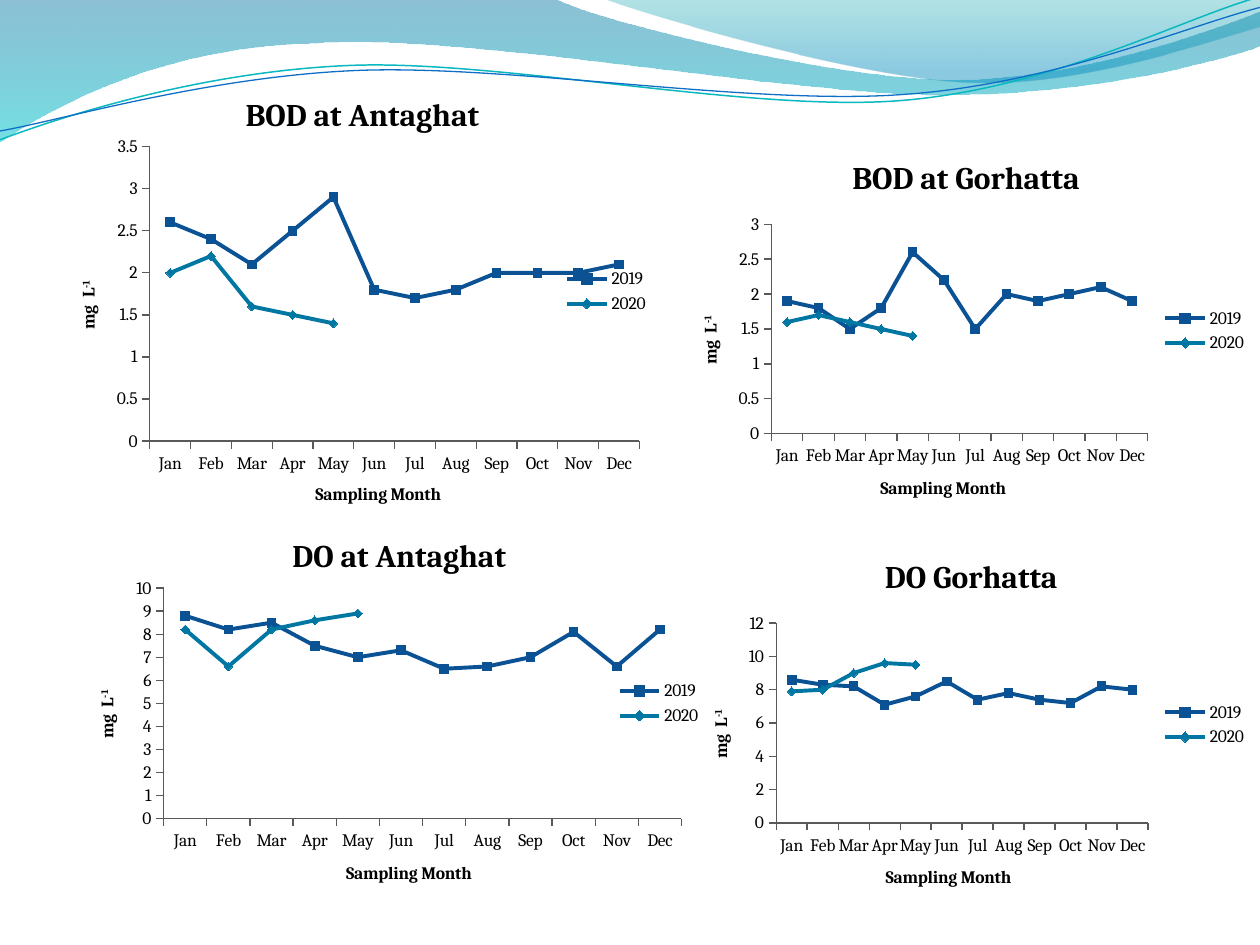
from math import cos, radians, sin

from lxml.etree import SubElement
from pptx import Presentation
from pptx.chart.data import CategoryChartData
from pptx.dml.color import RGBColor
from pptx.enum.chart import (XL_CHART_TYPE, XL_LEGEND_POSITION,
                             XL_MARKER_STYLE, XL_TICK_MARK)
from pptx.oxml.ns import qn
from pptx.util import Cm, Pt

FONT = "Cambria"
MONTHS = "Jan Feb Mar Apr May Jun Jul Aug Sep Oct Nov Dec".split()
STYLES = [("0A5294", XL_MARKER_STYLE.SQUARE),
          ("0076A3", XL_MARKER_STYLE.DIAMOND)]

# A start, then lines (1 point) or cubic curves (3 points).
# x counts tenths of the box width, y is a share of its height.
BANDS = [
    ([[(0, 0)],
      [(4.4, -0.01)],
      [(4.76, 0.17), (6.64, 0.63), (7.58, 0.63)],
      [(8.53, 0.63), (9.58, 0.26), (10, 0.09)],
      [(10.01, 0.36)],
      [(9.83, 0.44), (8.7, 0.76), (7.46, 0.75)],
      [(6.22, 0.75), (3.82, 0.28), (2.57, 0.34)],
      [(1.29, 0.36), (0.46, 0.83), (-0.01, 1.13)]],
     [(0, "0074A1", 45), (1, "00C6CF", 55)]),
    ([[(4.79, -0.01)],
      [(5.09, 0.11), (6.82, 0.62), (7.69, 0.65)],
      [(8.56, 0.69), (9.61, 0.32), (10, 0.21)],
      [(10, 0)]],
     [(0, "00A1A9", 30), (0.8, "008BBF", 45)]),
]
LINES = [
    ([[(0, 1.11)],
      [(0.48, 0.93), (1.58, 0.57), (2.77, 0.52)],
      [(3.95, 0.47), (5.93, 0.89), (7.13, 0.8)],
      [(8.33, 0.71), (9.38, 0.15), (9.98, -0.02)]],
     "0AB8BF", 0.85),
    ([[(0, 1.04)],
      [(0.47, 0.96), (1.64, 0.61), (2.83, 0.56)],
      [(4.03, 0.51), (5.97, 0.84), (7.17, 0.75)],
      [(8.36, 0.67), (9.41, 0.21), (10, 0.06)]],
     "0F6FC6", 0.75),
]
TILT = -2.7

# Title, box in cm, axis top, axis step, plot area (or None), 2019, 2020
CHARTS = [
    ("BOD at Antaghat", (1.27, 1.47, 12.07, 8.81), 3.5, 0.5,
     (0.145, 0.169, 0.818, 0.674),
     [2.6, 2.4, 2.1, 2.5, 2.9, 1.8, 1.7, 1.8, 2, 2, 2, 2.1],
     [2, 2.2, 1.6, 1.5, 1.4]),
    ("DO at Antaghat", (1.7, 10.37, 12.7, 7.62), 10, 1,
     (0.126, 0.195, 0.822, 0.61),
     [8.8, 8.2, 8.5, 7.5, 7, 7.3, 6.5, 6.6, 7, 8.1, 6.6, 8.2],
     [8.2, 6.6, 8.2, 8.6, 8.9]),
    ("BOD at Gorhatta", (13.55, 2.75, 11.85, 7.83), 3, 0.5, None,
     [1.9, 1.8, 1.5, 1.8, 2.6, 2.2, 1.5, 2, 1.9, 2, 2.1, 1.9],
     [1.6, 1.7, 1.6, 1.5, 1.4]),
    ("DO Gorhatta", (13.76, 10.8, 11.64, 7.62), 12, 2, None,
     [8.6, 8.3, 8.2, 7.1, 7.6, 8.5, 7.4, 7.8, 7.4, 7.2, 8.2, 8],
     [7.9, 8, 9, 9.6, 9.5]),
]


def color(code):
    return RGBColor.from_string(code)


def spin(points, angle):
    """Turn points about the middle of their first and last."""
    (ax, ay), (bx, by) = points[0], points[-1]
    mx, my = (ax + bx) / 2, (ay + by) / 2
    c, s = cos(radians(angle)), sin(radians(angle))
    return [(mx + (x - mx) * c - (y - my) * s,
             my + (x - mx) * s + (y - my) * c) for x, y in points]


def bend(shape, parts):
    """Join each three line segments of a curved part into one curve."""
    segs = iter(list(shape._element.iter(qn("a:lnTo"))))
    for part in parts[1:]:
        group = [next(segs) for _ in part]
        if len(group) == 3:
            curve = group[0]
            curve.addprevious(new := curve.makeelement(qn("a:cubicBezTo")))
            for seg in group:
                new.append(seg[0])
                seg.getparent().remove(seg)


def add_path(slide, box, parts, close, tilt=0):
    left, top, width, height = box
    points = [(left + x / 10 * width, top + y * height)
              for part in parts for x, y in part]
    points = [(Cm(x), Cm(y)) for x, y in spin(points, -tilt)]
    pen = slide.shapes.build_freeform(*points[0])
    pen.add_line_segments(points[1:], close=close)
    shape = pen.convert_to_shape()
    bend(shape, parts)
    shape.rotation = tilt
    shape.shadow.inherit = False
    return shape


def add_waves(slide, box):
    for parts, stops in BANDS:
        band = add_path(slide, box, parts, True)
        band.line.fill.background()
        band.fill.gradient()
        band.fill.gradient_angle = 270
        for stop, (place, code, _) in zip(band.fill.gradient_stops, stops):
            stop.position = place
            stop.color.rgb = color(code)
        marks = band._element.iter(qn("a:gs"))
        for mark, (_, _, alpha) in zip(marks, stops):
            SubElement(mark[0], qn("a:alpha")).set("val", str(alpha * 1000))
    for parts, code, width in LINES:
        line = add_path(slide, box, parts, False, TILT)
        line.fill.background()
        line.line.color.rgb = color(code)
        line.line.width = Pt(width)


def set_font(font, size, bold):
    font.name, font.size, font.bold = FONT, Pt(size), bold
    font.color.rgb = color("000000")


def set_title(owner, text, size):
    frame = owner.text_frame
    frame.text = text
    set_font(frame.paragraphs[0].font, size, True)
    return frame


def set_plot(chart, area):
    plot = chart._chartSpace.chart.plotArea
    for old in plot.findall(qn("c:layout")):
        plot.remove(old)
    layout = SubElement(plot, qn("c:layout"))
    plot.insert(0, layout)
    manual = SubElement(layout, qn("c:manualLayout"))
    pairs = [("layoutTarget", "inner"), ("xMode", "edge"), ("yMode", "edge")]
    for tag, value in pairs + list(zip("xywh", area)):
        SubElement(manual, qn("c:" + tag)).set("val", str(value))


def add_lines(slide, box, title, top, step, area, *years):
    data = CategoryChartData()
    data.categories = MONTHS
    for name, vals in zip(("2019", "2020"), years):
        data.add_series(name, vals)
    chart = slide.shapes.add_chart(XL_CHART_TYPE.LINE_MARKERS,
                                   *map(Cm, box), data).chart
    set_font(chart.font, 10, False)
    chart.has_title = chart.has_legend = True
    set_title(chart.chart_title, title, 18)
    chart.legend.position = XL_LEGEND_POSITION.RIGHT
    chart.legend.include_in_layout = False
    if area:
        set_plot(chart, area)

    months, level = chart.category_axis, chart.value_axis
    for axis in (months, level):
        axis.has_major_gridlines = False
        axis.major_tick_mark = XL_TICK_MARK.OUTSIDE
        axis.format.line.color.rgb = color("595959")
    level.minimum_scale, level.maximum_scale = 0, top
    level.major_unit = step
    set_title(months.axis_title, "Sampling Month", 10)
    unit = set_title(level.axis_title, "mg  L", 10)
    power = unit.paragraphs[0].add_run()
    power.text = "-1"
    power._r.get_or_add_rPr().set("baseline", "30000")
    unit._txBody.bodyPr.set("rot", "-5400000")
    unit._txBody.bodyPr.set("vert", "horz")

    chart.plots[0].vary_by_categories = False
    for line, (code, mark) in zip(chart.plots[0].series, STYLES):
        line.smooth = False
        line.format.line.color.rgb = color(code)
        line.format.line.width = Pt(2.25)
        line.marker.style, line.marker.size = mark, 5
        line.marker.format.fill.solid()
        line.marker.format.fill.fore_color.rgb = color(code)
        line.marker.format.line.color.rgb = color(code)


def main():
    deck = Presentation()
    deck.slide_width, deck.slide_height = Cm(25.4), Cm(19.05)
    slide = deck.slides.add_slide(deck.slide_layouts[6])
    add_waves(slide, (0, 0, 25.4, 2.54))
    for title, box, *rest in CHARTS:
        add_lines(slide, box, title, *rest)
    deck.save("out.pptx")


if __name__ == "__main__":
    main()
